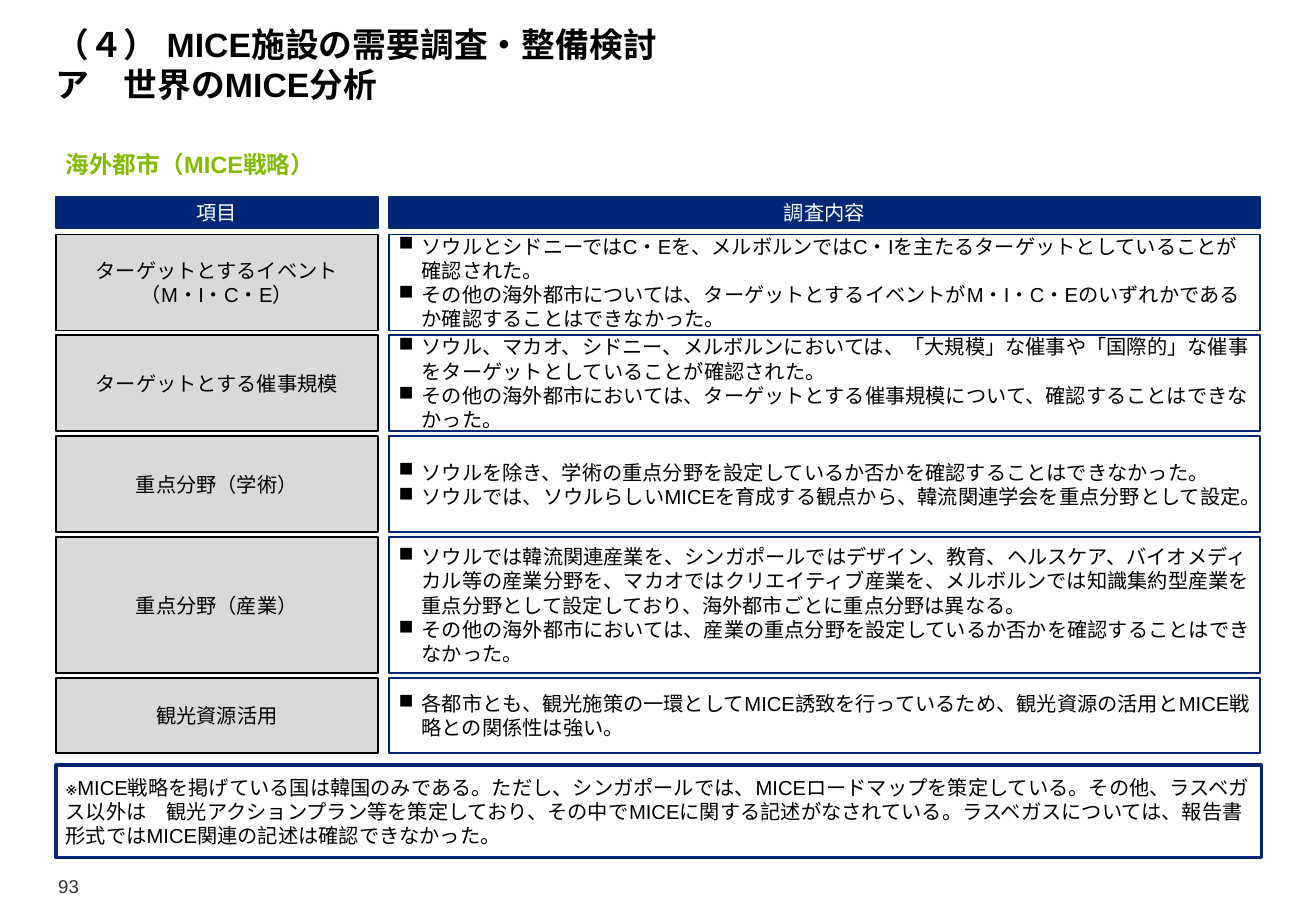
"""Build the slide on MICE strategies of overseas cities."""
import lxml.etree
import pptx
import pptx.dml.color
import pptx.enum.shapes
import pptx.enum.text
import pptx.oxml.ns
import pptx.util

Inches = pptx.util.Inches
ALIGN = pptx.enum.text.PP_ALIGN
ANCHOR = pptx.enum.text.MSO_ANCHOR
COLORS = {"navy": "002776", "gray": "D9D9D9", "white": "FFFFFF",
          "black": "000000", "green": "81BC00", "number": "313131"}
LEFT, WIDTH = 0.46, 9.92
ITEM_WIDTH, FINDING_LEFT, FINDING_WIDTH = 2.65, 3.2, 7.17
ROW_GAP, INSET, INDENT = 0.04, 0.08, 0.19

deck = pptx.Presentation()
deck.slide_width, deck.slide_height = Inches(10.83), Inches(7.5)
page = deck.slides.add_slide(deck.slide_layouts[6])


def write(box, lines, size=12, color="black", align=ALIGN.LEFT, bold=False,
          inset=INSET, anchor=ANCHOR.MIDDLE, wrap=True, bullet=False):
    """Fill a box with formatted lines, one paragraph each."""
    frame = box.text_frame
    frame.word_wrap = wrap
    frame.vertical_anchor = anchor
    frame.margin_left = frame.margin_right = Inches(inset)
    frame.margin_top = frame.margin_bottom = Inches(inset)
    for index, line in enumerate(lines):
        para = frame.add_paragraph() if index else frame.paragraphs[0]
        para.text = line
        para.alignment = align
        if bullet:
            props = para._p.get_or_add_pPr()
            props.set("marL", str(Inches(INDENT)))
            props.set("indent", str(-Inches(INDENT)))
            mark = lxml.etree.SubElement(props, pptx.oxml.ns.qn("a:buChar"))
            mark.set("char", "■")
        for span in para.runs:
            span.font.size = pptx.util.Pt(size)
            span.font.bold = bold
            span.font.color.rgb = pptx.dml.color.RGBColor.from_string(COLORS[color])
            span.font.name = "Arial"
            asian = lxml.etree.SubElement(span._r.get_or_add_rPr(), pptx.oxml.ns.qn("a:ea"))
            asian.set("typeface", "Arial")


def add_panel(left, top, width, height, fill, line, weight=1):
    """Add a bordered rectangle."""
    panel = page.shapes.add_shape(
        pptx.enum.shapes.MSO_SHAPE.RECTANGLE,
        Inches(left), Inches(top), Inches(width), Inches(height))
    panel.shadow.inherit = False
    panel.fill.solid()
    panel.fill.fore_color.rgb = pptx.dml.color.RGBColor.from_string(COLORS[fill])
    panel.line.color.rgb = pptx.dml.color.RGBColor.from_string(COLORS[line])
    panel.line.width = pptx.util.Pt(weight)
    return panel


title = page.shapes.add_textbox(Inches(LEFT), Inches(0.15), Inches(WIDTH), Inches(0.71))
write(title, ["（４） MICE施設の需要調査・整備検討", "ア　世界のMICE分析"],
      size=20, bold=True, inset=0, anchor=ANCHOR.BOTTOM)

subtitle = page.shapes.add_textbox(Inches(LEFT), Inches(1.11), Inches(4.72), Inches(0.47))
write(subtitle, ["海外都市（MICE戦略）"], size=14, color="green", bold=True, wrap=False)
subtitle.text_frame.paragraphs[0].line_spacing = 1.06

for left, width, heading in [(LEFT, ITEM_WIDTH, "項目"),
                             (FINDING_LEFT, FINDING_WIDTH, "調査内容")]:
    header = add_panel(left, 1.62, width, 0.26, "navy", "navy")
    write(header, [heading], color="white", align=ALIGN.CENTER)

rows = [
    (0.79, ["ターゲットとするイベント", "（M・I・C・E）"],
     ["ソウルとシドニーではC・Eを、メルボルンではC・Iを主たるターゲットとしていることが確認された。",
      "その他の海外都市については、ターゲットとするイベントがM・I・C・Eのいずれかであるか確認することはできなかった。"]),
    (0.79, ["ターゲットとする催事規模"],
     ["ソウル、マカオ、シドニー、メルボルンにおいては、「大規模」な催事や「国際的」な催事をターゲットとしていることが確認された。",
      "その他の海外都市においては、ターゲットとする催事規模について、確認することはできなかった。"]),
    (0.79, ["重点分野（学術）"],
     ["ソウルを除き、学術の重点分野を設定しているか否かを確認することはできなかった。",
      "ソウルでは、ソウルらしいMICEを育成する観点から、韓流関連学会を重点分野として設定。"]),
    (1.12, ["重点分野（産業）"],
     ["ソウルでは韓流関連産業を、シンガポールではデザイン、教育、ヘルスケア、バイオメディカル等の産業分野を、"
      "マカオではクリエイティブ産業を、メルボルンでは知識集約型産業を重点分野として設定しており、"
      "海外都市ごとに重点分野は異なる。",
      "その他の海外都市においては、産業の重点分野を設定しているか否かを確認することはできなかった。"]),
    (0.62, ["観光資源活用"],
     ["各都市とも、観光施策の一環としてMICE誘致を行っているため、観光資源の活用とMICE戦略との関係性は強い。"]),
]
top = 1.93
for height, item, findings in rows:
    finding_panel = add_panel(FINDING_LEFT, top, FINDING_WIDTH, height, "white", "navy")
    write(finding_panel, findings, bullet=True)
    item_panel = add_panel(LEFT, top, ITEM_WIDTH, height, "gray", "black")
    write(item_panel, item, align=ALIGN.CENTER)
    top += height + ROW_GAP

note = add_panel(LEFT, 6.3, WIDTH, 0.76, "white", "navy", weight=2)
write(note, ["※MICE戦略を掲げている国は韓国のみである。ただし、シンガポールでは、MICEロードマップを策定している。"
             "その他、ラスベガス以外は　観光アクションプラン等を策定しており、その中でMICEに関する記述がなされている。"
             "ラスベガスについては、報告書形式ではMICE関連の記述は確認できなかった。"])

number = page.shapes.add_textbox(Inches(0.45), Inches(7.2), Inches(0.2), Inches(0.19))
write(number, ["93"], size=11, color="number", align=ALIGN.RIGHT,
      inset=0, anchor=ANCHOR.BOTTOM, wrap=False)

deck.save("out.pptx")
